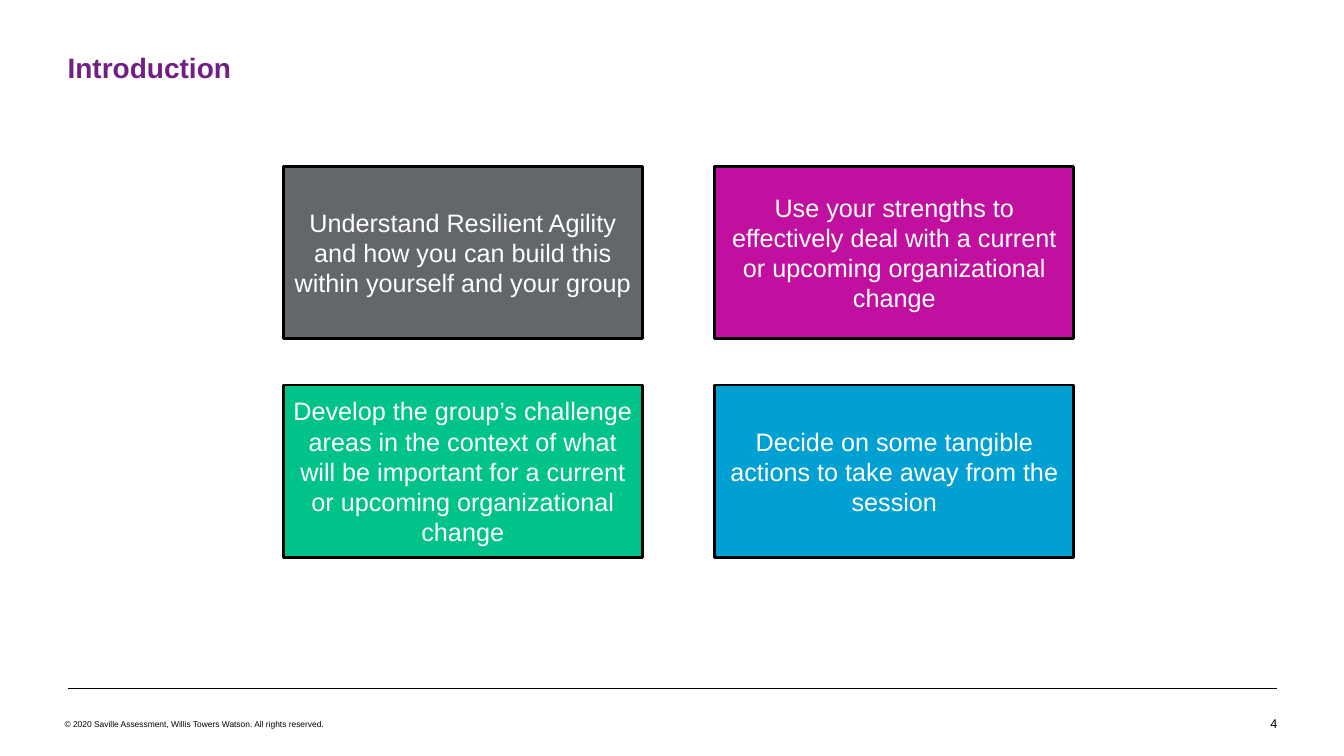
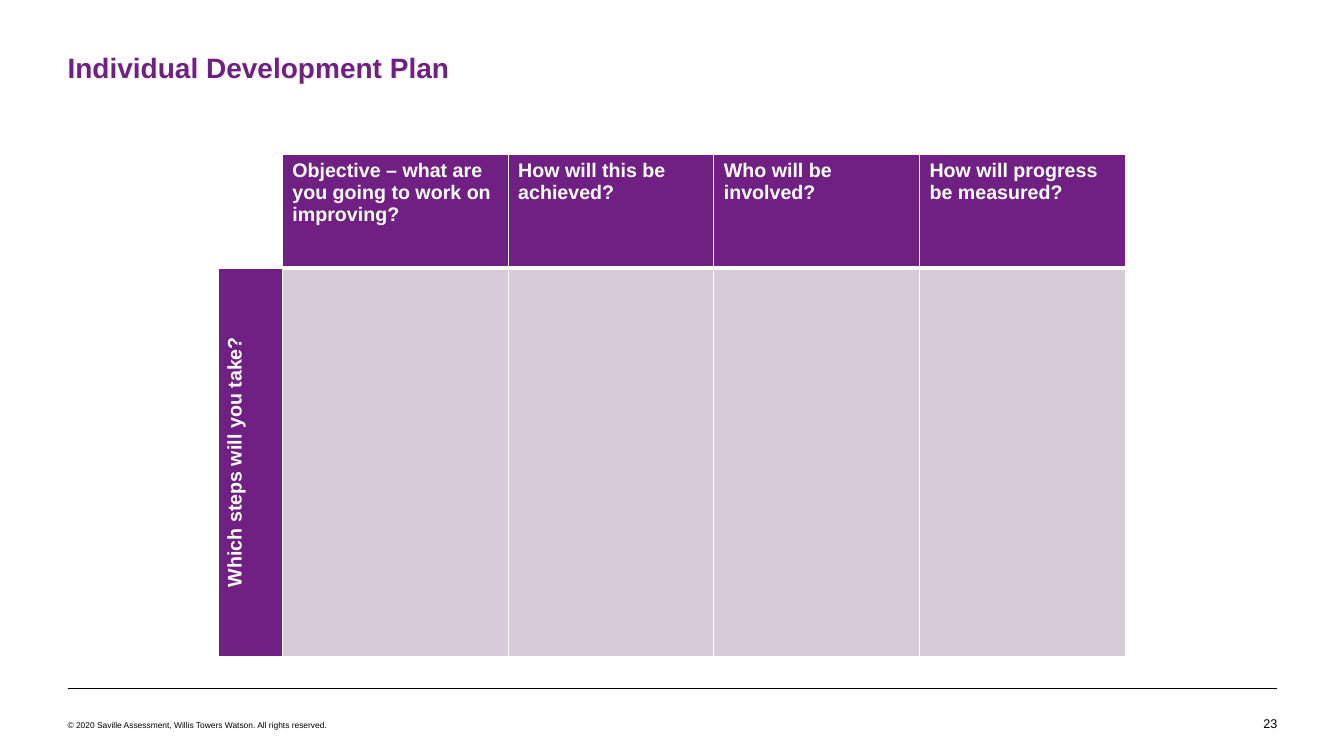
from dataclasses import dataclass

from lxml import etree
from pptx import Presentation
from pptx.dml.color import RGBColor
from pptx.enum import shapes, text
from pptx.oxml import ns
from pptx.util import Inches, Pt


@dataclass(frozen=True)
class Theme:
    font: str = "Arial"
    purple: str = "702082"
    lilac: str = "D5CCD8"
    gray: str = "63666A"
    pink: str = "C110A0"
    green: str = "00C389"
    blue: str = "00A0D2"
    black: str = "000000"
    white: str = "FFFFFF"
    title: int = 20
    card: int = 18
    cell: int = 14
    page: int = 9
    legal: int = 6


T = Theme()
LEFT, WIDTH = 0.67, 12
LEGAL = "© 2020 Saville Assessment, Willis Towers Watson. All rights reserved."


def rgb(color):
    return RGBColor.from_string(color)


def write(frame, words, size, color=T.black, bold=False,
          align=text.PP_ALIGN.LEFT, anchor=text.MSO_ANCHOR.TOP, inset=None):
    frame.word_wrap = True
    frame.vertical_anchor = anchor
    if inset is not None:
        frame.margin_left = frame.margin_right = Inches(inset)
        frame.margin_top = frame.margin_bottom = Inches(inset)
    para = frame.paragraphs[0]
    para.alignment = align
    run = para.add_run()
    run.text = words
    font = run.font
    font.name, font.size, font.bold = T.font, Pt(size), bold
    font.color.rgb = rgb(color)


def label(slide, box, words, size, **style):
    shape = slide.shapes.add_textbox(*map(Inches, box))
    write(shape.text_frame, words, size, inset=0, **style)


def rule(slide, top):
    line = slide.shapes.add_connector(
        shapes.MSO_CONNECTOR.STRAIGHT, Inches(LEFT), Inches(top),
        Inches(LEFT + WIDTH), Inches(top))
    line.line.color.rgb = rgb(T.black)
    line.line.width = Pt(0.25)
    etree.SubElement(line._element.spPr, ns.qn("a:effectLst"))


def new_slide(deck, title, page, legal_at):
    """Add a slide with the shared title, rule and footer."""
    slide = deck.slides.add_slide(deck.slide_layouts[5])
    head = slide.shapes.title
    head.left, head.top = Inches(LEFT), Inches(0.5)
    head.width, head.height = Inches(WIDTH), Inches(0.34)
    write(head.text_frame, title, T.title, color=T.purple, bold=True, inset=0)
    rule(slide, 6.83)
    label(slide, (12.11, 7.1, 0.56, 0.15), page, T.page,
          align=text.PP_ALIGN.RIGHT)
    label(slide, (*legal_at, 7.7, 0.1), LEGAL, T.legal)
    return slide


def card(slide, box, words, color):
    shape = slide.shapes.add_shape(
        shapes.MSO_SHAPE.RECTANGLE, *map(Inches, box))
    shape.shadow.inherit = False
    shape.fill.solid()
    shape.fill.fore_color.rgb = rgb(color)
    shape.line.color.rgb = rgb(T.black)
    shape.line.width = Pt(2)
    write(shape.text_frame, words, T.card, color=T.white,
          align=text.PP_ALIGN.CENTER, anchor=text.MSO_ANCHOR.MIDDLE)


def paint(cell, color, **edges):
    """Fill a cell; edges maps L, R, T, B to white line widths in points."""
    props = cell._tc.get_or_add_tcPr()
    for side in "LRTB":
        if side in edges:
            line = etree.SubElement(props, ns.qn(f"a:ln{side}"),
                                    w=str(Pt(edges[side])))
            fill = etree.SubElement(line, ns.qn("a:solidFill"))
            etree.SubElement(fill, ns.qn("a:srgbClr"), val=T.white)
    cell.fill.solid()
    cell.fill.fore_color.rgb = rgb(color)


def plan(slide, heads, side):
    cols, rows = (0.63, 2.24, 2.04, 2.04, 2.04), (1.13, 3.85)
    box = (2.17, 1.53, sum(cols), sum(rows))
    grid = slide.shapes.add_table(
        len(rows), len(cols), *map(Inches, box)).table
    grid.first_row = grid.horz_banding = False
    for col, width in zip(grid.columns, cols):
        col.width = Inches(width)
    for row, height in zip(grid.rows, rows):
        row.height = Inches(height)

    # Header row and body, with an open corner
    grid.cell(0, 0).fill.background()
    for i, words in enumerate(heads, 1):
        top = grid.cell(0, i)
        paint(top, T.purple, L=1, R=1, T=1, B=3)
        write(top.text_frame, words, T.cell, color=T.white, bold=True)
        paint(grid.cell(1, i), T.lilac, L=1, R=1, T=3, B=1)

    # Turned side heading
    turned = grid.cell(1, 0)
    paint(turned, T.purple, L=1, R=1, B=1)
    write(turned.text_frame, side, T.cell, color=T.white, bold=True,
          align=text.PP_ALIGN.CENTER)
    turned._tc.get_or_add_tcPr().set("vert", "vert270")


def main():
    deck = Presentation()
    deck.slide_width, deck.slide_height = Inches(13.33), Inches(7.5)

    # Goals in a two-by-two grid
    slide = new_slide(deck, "Introduction", "4", (0.64, 7.13))
    goals = (
        ("Understand Resilient Agility and how you can build this within "
         "yourself and your group", T.gray),
        ("Use your strengths to effectively deal with a current or upcoming "
         "organizational change", T.pink),
        ("Develop the group’s challenge areas in the context of what will be "
         "important for a current or upcoming organizational change", T.green),
        ("Decide on some tangible actions to take away from the session",
         T.blue),
    )
    for i, (words, color) in enumerate(goals):
        row, col = divmod(i, 2)
        card(slide, (2.81 + 4.28 * col, 1.65 + 2.17 * row, 3.56, 1.71),
             words, color)

    # Plan table
    slide = new_slide(deck, "Individual Development Plan", "23", (LEFT, 7.14))
    plan(slide,
         ("Objective – what are you going to work on improving?",
          "How will this be achieved?",
          "Who will be involved?",
          "How will progress be measured?"),
         "Which steps will you take?")

    deck.save("out.pptx")


if __name__ == "__main__":
    main()
